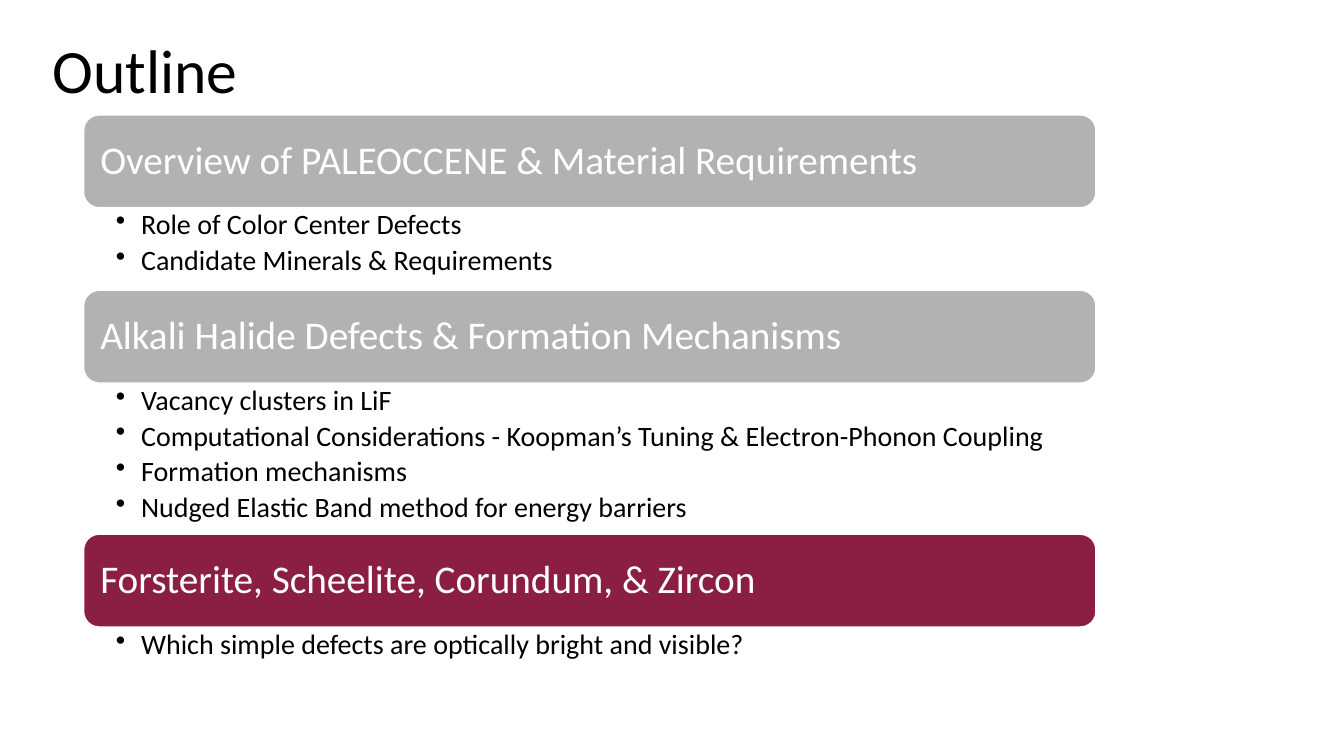
"""Build the outline slide: three section bars, each with its bullet list."""
from lxml.etree import SubElement
from pptx import Presentation
from pptx.dml.color import RGBColor
from pptx.enum.shapes import MSO_SHAPE
from pptx.enum.text import MSO_ANCHOR, PP_ALIGN
from pptx.oxml.ns import qn
from pptx.util import Inches, Pt

COLORS = {"black": "000000", "white": "FFFFFF", "gray": "B1B3B3", "maroon": "8B1F41"}
LEFT, WIDTH, BAR_HEIGHT = 0.83, 10.04, 0.92
SECTIONS = [
    (1.14, 0.81, "gray", "Overview of PALEOCCENE & Material Requirements",
     ["Role of Color Center Defects", "Candidate Minerals & Requirements"]),
    (2.88, 1.5, "gray", "Alkali Halide Defects & Formation Mechanisms",
     ["Vacancy clusters in LiF",
      "Computational Considerations - Koopman’s Tuning & Electron-Phonon Coupling",
      "Formation mechanisms",
      "Nudged Elastic Band method for energy barriers"]),
    (5.3, 0.81, "maroon", "Forsterite, Scheelite, Corundum, & Zircon",
     ["Which simple defects are optically bright and visible?"]),
]


def style_paragraph(paragraph, size, color):
    paragraph.alignment = PP_ALIGN.LEFT
    paragraph.line_spacing = 0.9
    paragraph.font.name = "Calibri"
    paragraph.font.size = Pt(size)
    paragraph.font.color.rgb = RGBColor.from_string(COLORS[color])


def set_frame(frame, anchor, left, right, vertical):
    frame.word_wrap = True
    frame.vertical_anchor = anchor
    frame.margin_left, frame.margin_right = Inches(left), Inches(right)
    frame.margin_top = frame.margin_bottom = Inches(vertical)


presentation = Presentation()
presentation.slide_width, presentation.slide_height = Inches(13.33), Inches(7.5)
slide = presentation.slides.add_slide(presentation.slide_layouts[6])

title = slide.shapes.add_textbox(Inches(0.42), Inches(0), Inches(11.5), Inches(1.45))
set_frame(title.text_frame, MSO_ANCHOR.MIDDLE, 0.1, 0.1, 0.05)
title.text_frame.text = "Outline"
style_paragraph(title.text_frame.paragraphs[0], 44, "black")

for top, list_height, fill, heading, bullets in SECTIONS:
    bar = slide.shapes.add_shape(MSO_SHAPE.ROUNDED_RECTANGLE, Inches(LEFT), Inches(top),
                                 Inches(WIDTH), Inches(BAR_HEIGHT))
    bar.shadow.inherit = False
    bar.fill.solid()
    bar.fill.fore_color.rgb = RGBColor.from_string(COLORS[fill])
    bar.line.color.rgb = RGBColor.from_string(COLORS["white"])
    bar.line.width = Pt(1)
    set_frame(bar.text_frame, MSO_ANCHOR.MIDDLE, 0.12, 0.12, 0.12)
    bar.text_frame.text = heading
    style_paragraph(bar.text_frame.paragraphs[0], 28, "white")

    bullet_box = slide.shapes.add_textbox(Inches(LEFT), Inches(top + BAR_HEIGHT),
                                          Inches(WIDTH), Inches(list_height))
    set_frame(bullet_box.text_frame, MSO_ANCHOR.TOP, 0.32, 0.16, 0.03)
    bullet_box.text_frame.text = "\n".join(bullets)
    for paragraph in bullet_box.text_frame.paragraphs:
        paragraph.level = 1
        properties = paragraph._p.get_or_add_pPr()
        properties.set("marL", str(Inches(0.25)))
        properties.set("indent", str(Inches(-0.25)))
        SubElement(properties, qn("a:buChar")).set("char", "•")
        paragraph.space_after = Pt(4)
        style_paragraph(paragraph, 20, "black")

presentation.save("out.pptx")
